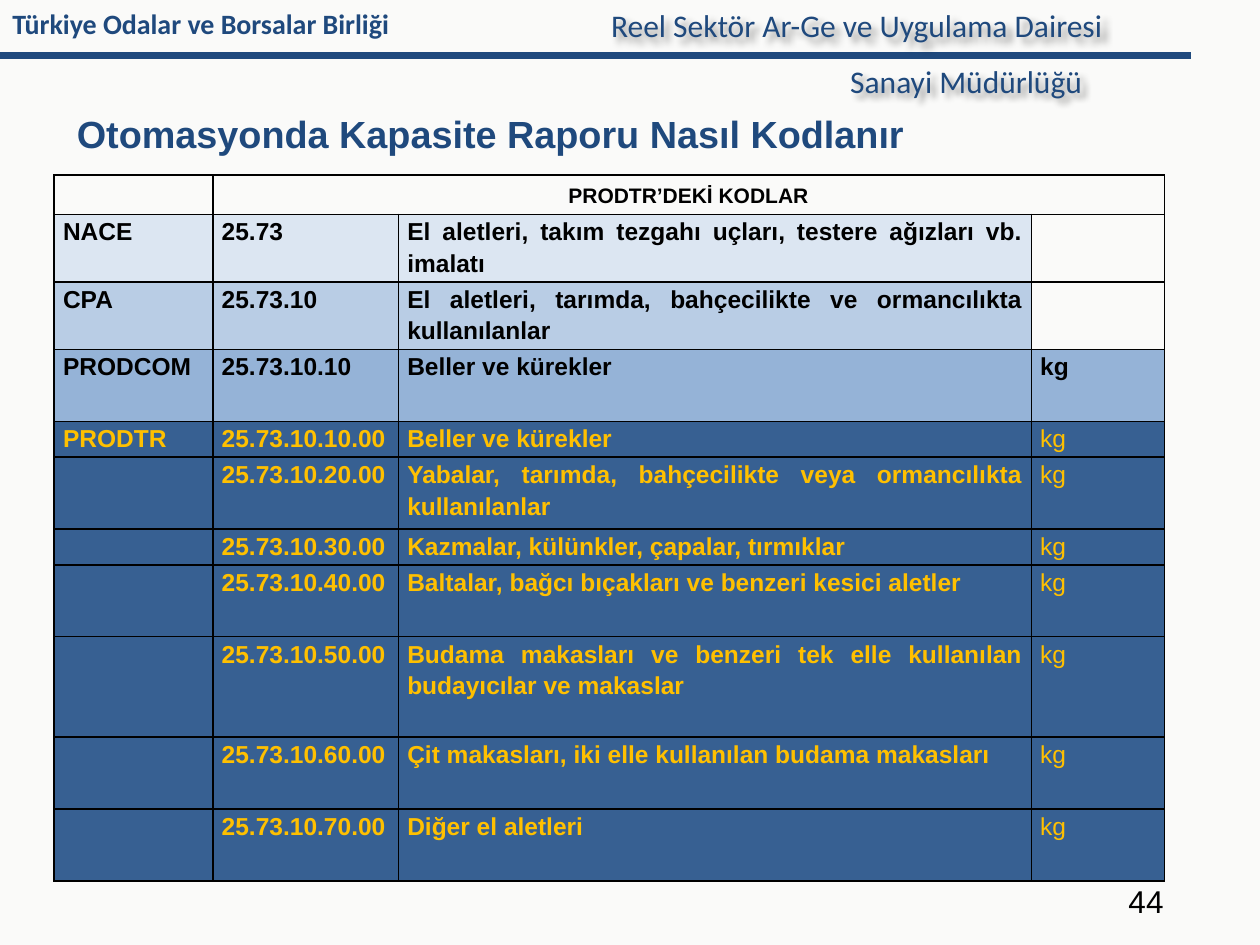
from lxml import etree
from pptx import Presentation
from pptx.dml.color import RGBColor
from pptx.enum.shapes import MSO_CONNECTOR
from pptx.enum.text import MSO_ANCHOR, PP_ALIGN
from pptx.oxml import parse_xml
from pptx.oxml.ns import nsdecls, qn
from pptx.util import Cm, Pt

STRAIGHT = MSO_CONNECTOR.STRAIGHT
TOP, MIDDLE = MSO_ANCHOR.TOP, MSO_ANCHOR.MIDDLE
LEFT, CENTER, JUSTIFY = PP_ALIGN.LEFT, PP_ALIGN.CENTER, PP_ALIGN.JUSTIFY

COLORS = {
    "background": "FAFAF9",
    "navy": "1F497D",
    "black": "000000",
    "gold": "FFC000",
    "nace": "DCE6F2",
    "cpa": "B9CDE5",
    "prodcom": "95B3D7",
    "prodtr": "376092",
}

COLUMN_WIDTHS = [3.2, 3.74, 12.76, 2.68]
HEADING_HEIGHT = 0.79

# level, code, description, unit, fill, row height in cm
CODES = [
    ("NACE", "25.73", "El aletleri, takım tezgahı uçları, testere ağızları vb. imalatı",
     "", "nace", 1.36),
    ("CPA", "25.73.10", "El aletleri, tarımda, bahçecilikte ve ormancılıkta kullanılanlar",
     "", "cpa", 1.36),
    ("PRODCOM", "25.73.10.10", "Beller ve kürekler", "kg", "prodcom", 1.45),
    ("PRODTR", "25.73.10.10.00", "Beller ve kürekler", "kg", "prodtr", 0.72),
    ("", "25.73.10.20.00", "Yabalar, tarımda, bahçecilikte veya ormancılıkta kullanılanlar",
     "kg", "prodtr", 1.45),
    ("", "25.73.10.30.00", "Kazmalar, külünkler, çapalar, tırmıklar", "kg", "prodtr", 0.72),
    ("", "25.73.10.40.00", "Baltalar, bağcı bıçakları ve benzeri kesici aletler",
     "kg", "prodtr", 1.45),
    ("", "25.73.10.50.00",
     "Budama makasları ve benzeri tek elle kullanılan budayıcılar ve makaslar",
     "kg", "prodtr", 2.02),
    ("", "25.73.10.60.00", "Çit makasları, iki elle kullanılan budama makasları",
     "kg", "prodtr", 1.45),
    ("", "25.73.10.70.00", "Diğer el aletleri", "kg", "prodtr", 1.45),
]


def rgb(name):
    return RGBColor.from_string(COLORS[name])


def write_text(frame, text, size=18, font="Calibri", color="navy", bold=False,
               align=LEFT, spacing=None):
    paragraph = frame.paragraphs[0]
    paragraph.alignment = align
    paragraph.line_spacing = spacing
    if not text:
        # keeps an empty cell from stretching its row
        paragraph._p.get_or_add_endParaRPr().set("sz", str(size * 100))
        return
    run = paragraph.add_run()
    run.text = text
    run.font.size = Pt(size)
    run.font.name = font
    run.font.bold = bold
    run.font.color.rgb = rgb(color)


def add_text(slide, text, left, top, width, height, anchor=TOP, **text_format):
    box = slide.shapes.add_textbox(Cm(left), Cm(top), Cm(width), Cm(height))
    box.text_frame.word_wrap = True
    box.text_frame.vertical_anchor = anchor
    write_text(box.text_frame, text, **text_format)
    return box


def add_soft_shadow(box):
    box._element.spPr.append(parse_xml(
        f'<a:effectLst {nsdecls("a")}>'
        '<a:outerShdw blurRad="50800" dist="50800" dir="2700000" algn="tl" rotWithShape="0">'
        f'<a:srgbClr val="{COLORS["black"]}"><a:alpha val="40000"/></a:srgbClr>'
        '</a:outerShdw></a:effectLst>'))


def add_header_rule(slide):
    rule = slide.shapes.add_connector(STRAIGHT, Cm(0), Cm(1.12), Cm(24), Cm(1.12))
    rule.line.color.rgb = rgb("navy")
    rule.line.width = Pt(4)
    etree.SubElement(rule._element.spPr, qn("a:effectLst"))


def add_borders(cell):
    properties = cell._tc.get_or_add_tcPr()
    for position, side in enumerate(("lnL", "lnR", "lnT", "lnB")):
        properties.insert(position, parse_xml(
            f'<a:{side} {nsdecls("a")} w="{Pt(1)}"><a:solidFill>'
            f'<a:srgbClr val="{COLORS["black"]}"/></a:solidFill></a:{side}>'))


def fill_cell(cell, text, fill=None, anchor=TOP, **text_format):
    cell.margin_left = cell.margin_right = Cm(0.18)
    cell.margin_top = cell.margin_bottom = 0
    cell.vertical_anchor = anchor
    if fill:
        cell.fill.solid()
        cell.fill.fore_color.rgb = rgb(fill)
    else:
        cell.fill.background()
    add_borders(cell)
    write_text(cell.text_frame, text, font="Arial", spacing=1.15, **text_format)


def add_code_table(slide):
    heights = [HEADING_HEIGHT] + [code[-1] for code in CODES]
    table = slide.shapes.add_table(
        len(heights), len(COLUMN_WIDTHS), Cm(1.09), Cm(3.53),
        Cm(sum(COLUMN_WIDTHS)), Cm(sum(heights))).table
    table.first_row = table.horz_banding = False
    for column, width in zip(table.columns, COLUMN_WIDTHS):
        column.width = Cm(width)
    for row, height in zip(table.rows, heights):
        row.height = Cm(height)

    table.cell(0, 1).merge(table.cell(0, 3))
    for column, heading in enumerate(("", "PRODTR’DEKİ KODLAR", "", "")):
        fill_cell(table.cell(0, column), heading, anchor=MIDDLE, size=12,
                  color="black", bold=True, align=CENTER)

    for row, (*texts, fill, _) in enumerate(CODES, start=1):
        is_prodtr = fill == "prodtr"
        for column, text in enumerate(texts):
            is_unit = column == 3
            fill_cell(table.cell(row, column), text,
                      fill=None if is_unit and not text else fill,
                      size=14, color="gold" if is_prodtr else "black",
                      bold=not (is_unit and is_prodtr), align=JUSTIFY)


def main():
    presentation = Presentation()
    presentation.slide_width, presentation.slide_height = Cm(25.4), Cm(19.05)
    slide = presentation.slides.add_slide(presentation.slide_layouts[6])
    slide.background.fill.solid()
    slide.background.fill.fore_color.rgb = rgb("background")

    add_header_rule(slide)
    add_text(slide, "Türkiye Odalar ve Borsalar Birliği", 0, 0, 20.7, 0.94,
             size=16, bold=True)
    add_text(slide, "Otomasyonda Kapasite Raporu Nasıl Kodlanır", 1.3, 2.03, 22.86, 1.2,
             anchor=MIDDLE, size=21.6, font="Arial", bold=True, spacing=1.15)
    add_text(slide, "44", 22.5, 17.65, 1.63, 1.02, font="Arial", color="black")
    department = add_text(slide, "Reel Sektör Ar-Ge ve Uygulama Dairesi",
                          12.07, 0, 11.2, 1.02)
    directorate = add_text(slide, "Sanayi Müdürlüğü", 16.89, 1.12, 6.38, 1.02)
    for unit_name in (department, directorate):
        add_soft_shadow(unit_name)
    add_code_table(slide)

    presentation.save("out.pptx")


if __name__ == "__main__":
    main()
